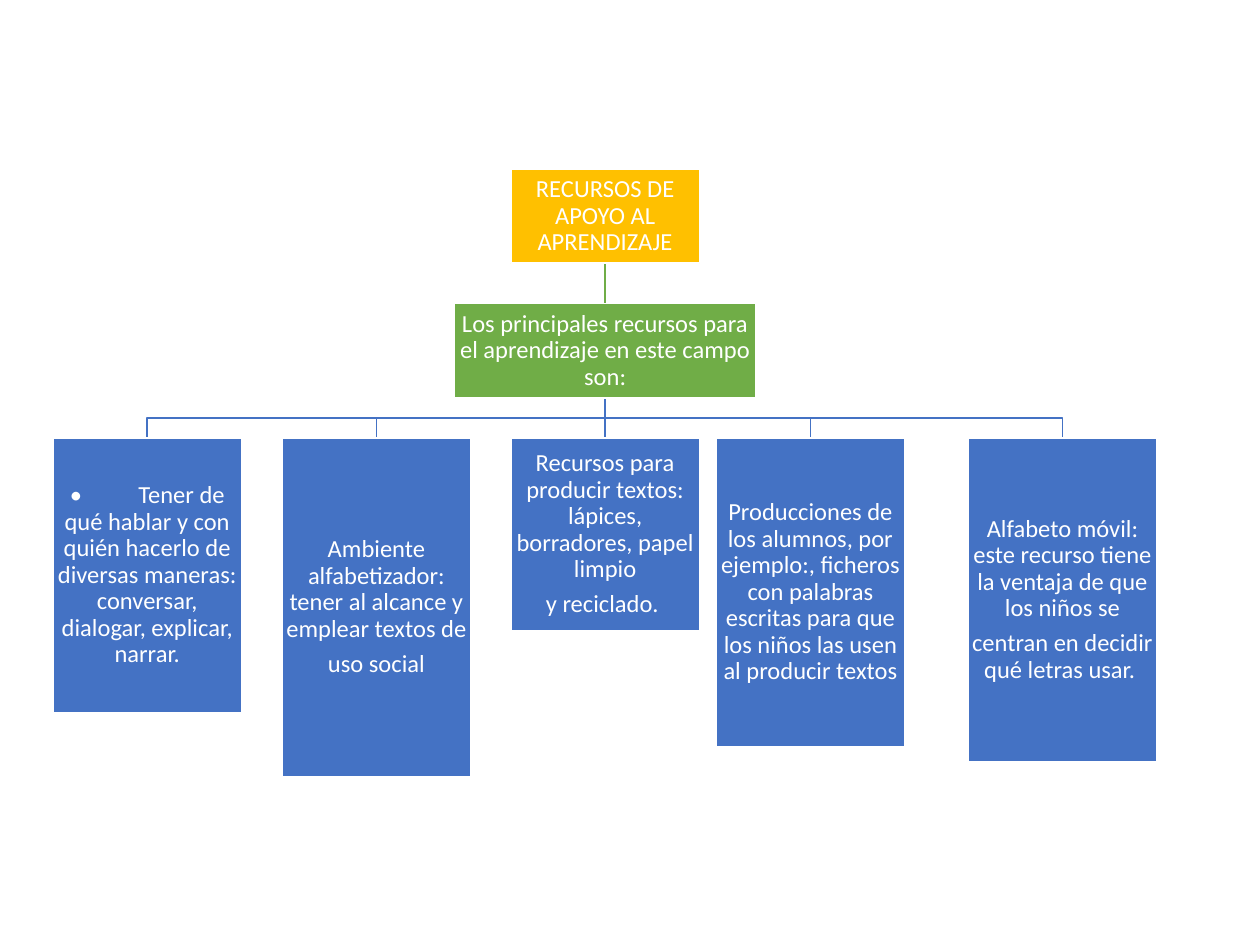
from pptx import Presentation
from pptx.dml.color import RGBColor
from pptx.enum.shapes import MSO_CONNECTOR, MSO_SHAPE
from pptx.enum.text import MSO_ANCHOR, PP_ALIGN
from pptx.oxml.ns import qn
from pptx.util import Cm, Pt
from lxml import etree

RECTANGLE = MSO_SHAPE.RECTANGLE
STRAIGHT = MSO_CONNECTOR.STRAIGHT
MIDDLE = MSO_ANCHOR.MIDDLE
CENTER = PP_ALIGN.CENTER

WHITE = RGBColor(0xFF, 0xFF, 0xFF)
GOLD = RGBColor(0xFF, 0xC0, 0x00)
GREEN = RGBColor(0x70, 0xAD, 0x47)
BLUE = RGBColor(0x44, 0x72, 0xC4)

# Layout in centimetres
AXIS = 12.2
BOX_WIDTH, BOX_HEIGHT = 3.81, 1.9
GAP = 0.81
TITLE_TOP = 3.41
INTRO_TOP = TITLE_TOP + BOX_HEIGHT + GAP
RESOURCES_TOP = INTRO_TOP + BOX_HEIGHT + GAP

# Centre, height and paragraphs of each resource
RESOURCES = [
    (2.97, 5.54, ["•\t Tener de qué hablar y con quién hacerlo de diversas "
                  "maneras: conversar, dialogar, explicar, narrar."]),
    (7.59, 6.83, ["Ambiente alfabetizador: tener al alcance y emplear textos de",
                  "uso social"]),
    (AXIS, 3.89, ["Recursos para producir textos: lápices, borradores, papel limpio",
                  "y reciclado. "]),
    (16.34, 6.22, ["Producciones de los alumnos, por ejemplo:, ficheros con palabras "
                   "escritas para que los niños las usen al producir textos"]),
    (21.42, 6.53, ["Alfabeto móvil: este recurso tiene la ventaja de que los niños se",
                   "centran en decidir qué letras usar. "]),
]


class OrgChart:
    font = "Calibri"
    size = Pt(14)
    line_width = Pt(1)
    inset = Cm(0.02)

    def __init__(self, slide):
        self.slide = slide

    def box(self, center, top, width, height, fill, paragraphs):
        box = self.slide.shapes.add_shape(
            RECTANGLE, Cm(center - width / 2), Cm(top), Cm(width), Cm(height))
        box.shadow.inherit = False
        box.fill.solid()
        box.fill.fore_color.rgb = fill
        box.line.color.rgb = WHITE
        box.line.width = self.line_width
        frame = box.text_frame
        frame.word_wrap = True
        frame.vertical_anchor = MIDDLE
        frame.margin_left = frame.margin_right = self.inset
        frame.margin_top = frame.margin_bottom = self.inset
        frame.text = "\n".join(paragraphs)
        for paragraph in frame.paragraphs:
            paragraph.alignment = CENTER
            paragraph.line_spacing = 0.9
            paragraph.space_after = Pt(5)
            for run in paragraph.runs:
                run.font.name = self.font
                run.font.size = self.size
                run.font.color.rgb = WHITE

    def stem(self, top, color):
        stem = self.slide.shapes.add_connector(
            STRAIGHT, Cm(AXIS), Cm(top), Cm(AXIS), Cm(top + GAP))
        stem.line.color.rgb = color
        stem.line.width = self.line_width
        etree.SubElement(stem._element.spPr, qn("a:effectLst"))

    def branch(self, top, center, color):
        bend = top + GAP / 2
        builder = self.slide.shapes.build_freeform(Cm(AXIS), Cm(top))
        corners = [(AXIS, bend), (center, bend), (center, top + GAP)]
        builder.add_line_segments([(Cm(x), Cm(y)) for x, y in corners], close=False)
        branch = builder.convert_to_shape()
        branch.shadow.inherit = False
        branch.fill.background()
        branch.line.color.rgb = color
        branch.line.width = self.line_width


def main():
    presentation = Presentation()
    presentation.slide_width, presentation.slide_height = Cm(25.4), Cm(19.05)
    chart = OrgChart(presentation.slides.add_slide(presentation.slide_layouts[6]))

    # Links between the levels
    for center, _, _ in reversed(RESOURCES):
        if center == AXIS:
            chart.stem(RESOURCES_TOP - GAP, BLUE)
        else:
            chart.branch(RESOURCES_TOP - GAP, center, BLUE)
    chart.stem(INTRO_TOP - GAP, GREEN)

    # Title and introduction
    chart.box(AXIS, TITLE_TOP, BOX_WIDTH, BOX_HEIGHT, GOLD,
              ["RECURSOS DE APOYO AL APRENDIZAJE"])
    chart.box(AXIS, INTRO_TOP, 6.07, BOX_HEIGHT, GREEN,
              ["Los principales recursos para el aprendizaje en este campo son:"])

    # Resources
    for center, height, paragraphs in RESOURCES:
        chart.box(center, RESOURCES_TOP, BOX_WIDTH, height, BLUE, paragraphs)

    presentation.save("out.pptx")


if __name__ == "__main__":
    main()
